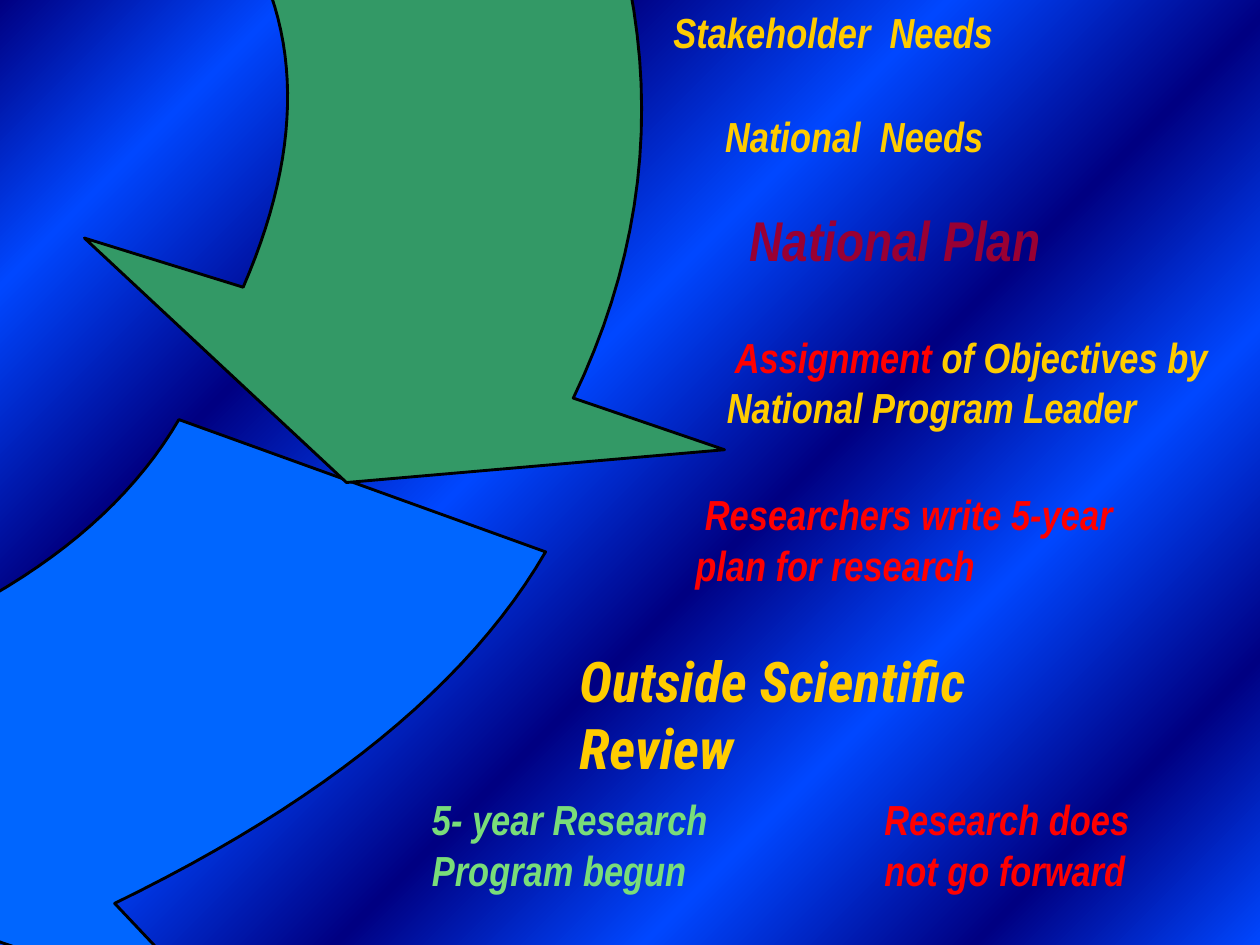
from lxml import etree
from pptx import Presentation
from pptx.dml.color import RGBColor
from pptx.enum.text import MSO_ANCHOR, MSO_AUTO_SIZE
from pptx.oxml.ns import qn
from pptx.util import Inches, Pt

TOP = MSO_ANCHOR.TOP
GROW = MSO_AUTO_SIZE.SHAPE_TO_FIT_TEXT

NAVY, BRIGHT_BLUE = "000082", "0047FF"
YELLOW, RED, MAROON, MINT = "FFCC00", "FF0000", "990033", "79DD79"
ARROW_BLUE, ARROW_GREEN, BLACK = "0066FF", "339966", "000000"

BAND_POSITIONS = [0, 13, 28, 43, 58, 72, 87, 100]
BAND_ANGLE = 45
CURVE_STEPS = 24

ARROWS = [
    {
        "fill": ARROW_BLUE,
        "outer_edge": {"start": (4.33, 4.38), "bend": (3.42, 5.95), "end": (0.91, 7.17)},
        "head": [(1.77, 8.08), (-1.66, 6.91), (-1.92, 4.59)],
        "inner_edge": {"start": (-1.2, 5.25), "bend": (0.71, 4.55), "end": (1.42, 3.33)},
    },
    {
        "fill": ARROW_GREEN,
        "outer_edge": {"start": (4.54, -1.5), "bend": (5.64, 0.89), "end": (4.55, 3.16)},
        "head": [(5.75, 3.57), (2.75, 3.83), (0.67, 1.89)],
        "inner_edge": {"start": (1.93, 2.28), "bend": (2.55, 0.85), "end": (2.08, -0.22)},
    },
]

ONE_LINE, HEADING_LINE, TWO_LINES = 0.5, 0.64, 0.91
HEADING = {"size": 32}
REVIEW_HEADING = {"size": 32, "font": "Roboto Condensed"}

STEPS = [
    ((5.17, 0, 3.75, ONE_LINE), [(" Stakeholder  Needs", YELLOW)], {}),
    ((5.58, 0.83, 3.75, ONE_LINE), [(" National  Needs", YELLOW)], {}),
    ((5.75, 1.58, 3.58, HEADING_LINE), [(" National Plan", MAROON)], HEADING),
    ((5.67, 2.58, 4.08, TWO_LINES),
     [(" Assignment", RED), (" of Objectives by National Program Leader", YELLOW)], {}),
    ((5.42, 3.83, 3.75, TWO_LINES),
     [(" Researchers write 5-year plan for research", RED)], {}),
    ((4.5, 5.08, 4.25, HEADING_LINE),
     [("Outside Scientific Review", YELLOW)], REVIEW_HEADING),
    ((6.92, 6.25, 2.17, TWO_LINES), [("Research does not go forward", RED)], {}),
    ((3.33, 6.25, 2.67, TWO_LINES), [("5- year Research Program begun", MINT)], {}),
]


def color(hex_code):
    return RGBColor.from_string(hex_code)


def paint_background(slide):
    slide.background.fill.gradient()
    gradient = slide.element.find(".//" + qn("a:gradFill"))
    bands = gradient.find(qn("a:gsLst"))
    for default_band in list(bands):
        bands.remove(default_band)
    for index, position in enumerate(BAND_POSITIONS):
        band = etree.SubElement(bands, qn("a:gs"), pos=str(position * 1000))
        etree.SubElement(band, qn("a:srgbClr"), val=(NAVY, BRIGHT_BLUE)[index % 2])
    direction = gradient.find(qn("a:lin"))
    direction.set("ang", str(BAND_ANGLE * 60000))
    direction.set("scaled", "0")


def curve(start, bend, end):
    points = []
    for step in range(CURVE_STEPS + 1):
        t = step / CURVE_STEPS
        weights = ((1 - t) ** 2, 2 * t * (1 - t), t ** 2)
        points.append(tuple(
            sum(weight * value for weight, value in zip(weights, axis))
            for axis in zip(start, bend, end)
        ))
    return points


def add_arrow(slide, fill, outer_edge, head, inner_edge):
    outline = curve(**outer_edge) + head + curve(**inner_edge)
    points = [(Inches(x), Inches(y)) for x, y in outline]
    builder = slide.shapes.build_freeform(*points[0])
    builder.add_line_segments(points[1:], close=True)
    arrow = builder.convert_to_shape()
    arrow.shadow.inherit = False
    arrow.fill.solid()
    arrow.fill.fore_color.rgb = color(fill)
    arrow.line.color.rgb = color(BLACK)
    arrow.line.width = Pt(1.63)


def add_text(slide, box, pieces, size=24, font="Arial Narrow"):
    frame = slide.shapes.add_textbox(*map(Inches, box)).text_frame
    frame.word_wrap = True
    frame.auto_size = GROW
    frame.vertical_anchor = TOP
    for text, hex_code in pieces:
        run = frame.paragraphs[0].add_run()
        run.text = text
        run.font.name = font
        run.font.size = Pt(size)
        run.font.bold = run.font.italic = True
        run.font.color.rgb = color(hex_code)


def main():
    deck = Presentation()
    deck.slide_width, deck.slide_height = Inches(10), Inches(7.5)
    slide = deck.slides.add_slide(deck.slide_layouts[6])
    paint_background(slide)
    for arrow in ARROWS:
        add_arrow(slide, **arrow)
    for box, pieces, style in STEPS:
        add_text(slide, box, pieces, **style)
    deck.save("out.pptx")


if __name__ == "__main__":
    main()
